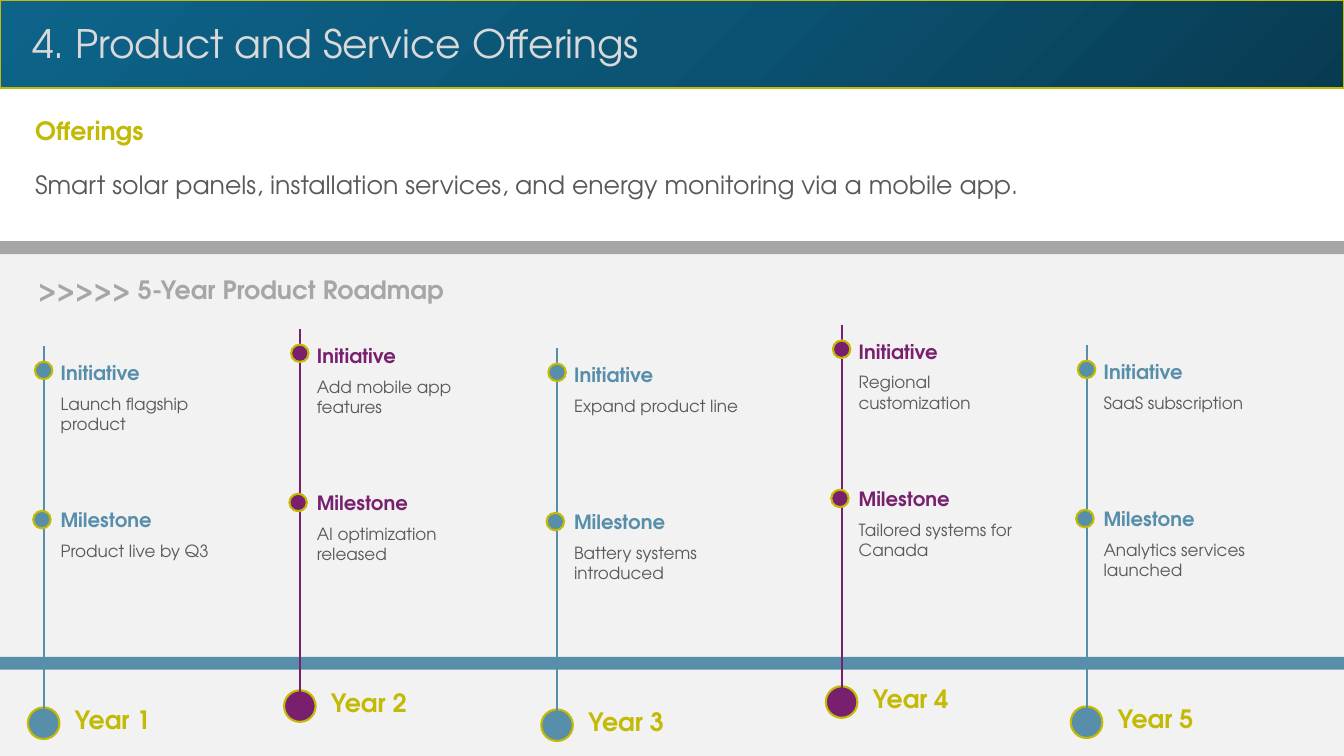
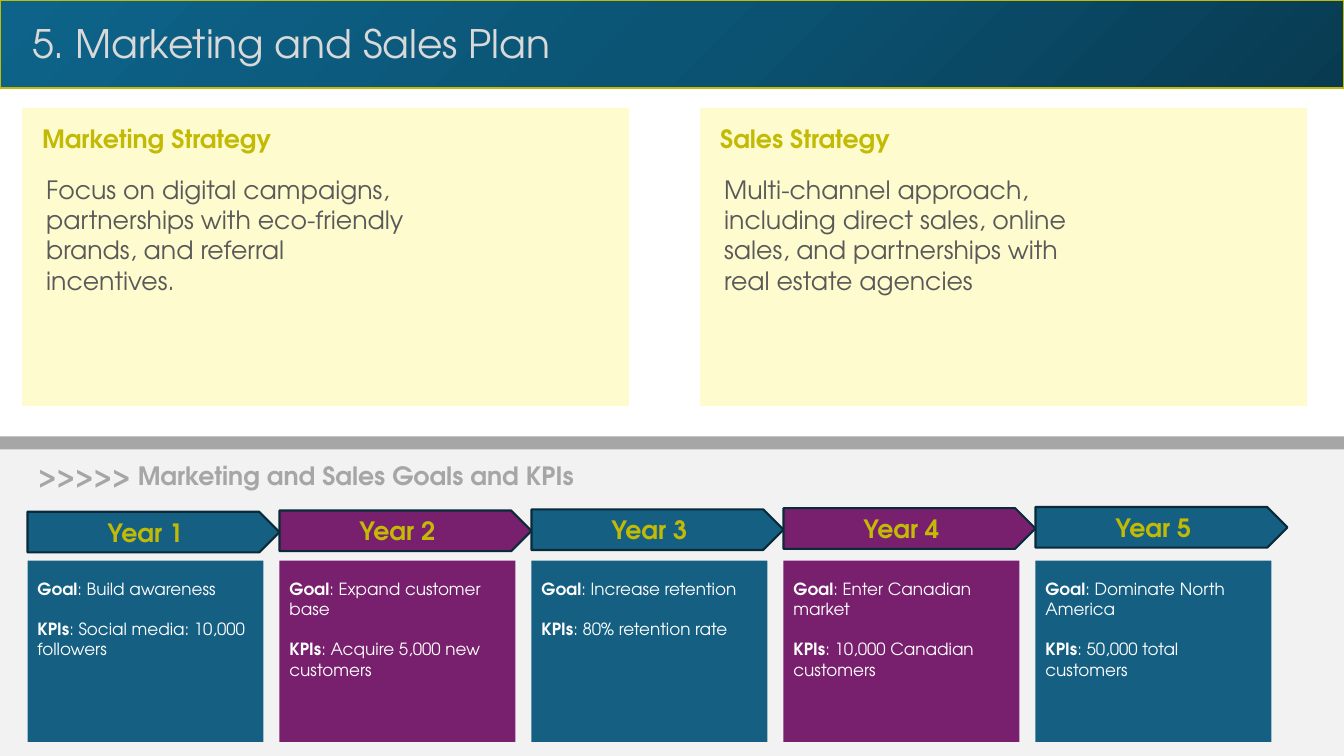
from copy import deepcopy
from typing import Any, NamedTuple

from lxml import etree
from pptx import Presentation, util as u
from pptx.dml import color as dml
from pptx.enum import shapes, text
from pptx.oxml.ns import qn

# The slide is a grid of 80 columns by 45 rows of square cells.
COLUMNS, ROWS = 80, 45
CELL = u.Inches(7.5) / ROWS

FONT = "TeX Gyre Adventor"
WHITE, PALE_GREY, TITLE_GREY = "FFFFFF", "F2F2F2", "D9D9D9"
MID_GREY, TEXT_GREY = "A6A6A6", "595959"
OLIVE, CREAM = "C3BA05", "FEFCCE"
STEEL, BLUE, PLUM, NAVY = "578EA9", "156082", "78206E", "092A39"
BAND_GRADIENT = ((0, "083B52"), (0.5, "0B5474"), (1, "0D638A"))

RECT = shapes.MSO_SHAPE.RECTANGLE
CIRCLE = shapes.MSO_SHAPE.OVAL
ARROW = shapes.MSO_SHAPE.PENTAGON
BAR_ROWS = 0.77


class Box(NamedTuple):
    col: float
    row: float
    cols: float
    rows: float


class Run(NamedTuple):
    words: str
    bold: bool = False


class RoadmapYear(NamedTuple):
    axis: float
    top: float
    text_cols: float
    initiative: str
    milestone: str


class Strategy(NamedTuple):
    heading: str
    body: str


class YearTarget(NamedTuple):
    goal: str
    kpis: str


ROADMAP = (
    RoadmapYear(2.6, 20.58, 12.6, "Launch flagship product", "Product live by Q3"),
    RoadmapYear(17.85, 19.56, 12.1, "Add mobile app features", "AI optimization released"),
    RoadmapYear(33.16, 20.7, 12.6, "Expand product line", "Battery systems introduced"),
    RoadmapYear(50.1, 19.32, 10.86, "Regional customization", "Tailored systems for Canada"),
    RoadmapYear(64.68, 20.52, 14.2, "SaaS subscription", "Analytics services launched"),
)
STRATEGIES = (
    Strategy("Marketing Strategy",
             "Focus on digital campaigns, partnerships with eco-friendly brands, "
             "and referral incentives."),
    Strategy("Sales Strategy",
             "Multi-channel approach, including direct sales, online sales, "
             "and partnerships with real estate agencies"),
)
TARGETS = (
    YearTarget("Build awareness", "Social media: 10,000 followers"),
    YearTarget("Expand customer base", "Acquire 5,000 new customers"),
    YearTarget("Increase retention", "80% retention rate"),
    YearTarget("Enter Canadian market", "10,000 Canadian customers"),
    YearTarget("Dominate North America", "50,000 total customers"),
)


def rgb(value: str) -> dml.RGBColor:
    return dml.RGBColor.from_string(value)


def cells(*counts: float) -> list[u.Emu]:
    return [u.Emu(round(count * CELL)) for count in counts]


def alternate(index: int, even: str) -> str:
    return PLUM if index % 2 else even


def add_block(parent: Any, box: Box, fill: str, *, kind: Any = RECT,
              outline: str | None = None) -> Any:
    """Draw a preset shape on a slide or in a group."""
    block = parent.shapes.add_shape(kind, *cells(*box))
    block.shadow.inherit = False
    block.fill.solid()
    block.fill.fore_color.rgb = rgb(fill)
    if outline:
        block.line.color.rgb = rgb(outline)
        block.line.width = u.Pt(1.5)
    else:
        block.line.fill.background()
    return block


def add_dot(parent: Any, x: float, y: float, size: float, fill: str) -> None:
    """Draw an outlined circle around the given centre."""
    add_block(parent, Box(x - size / 2, y - size / 2, size, size), fill,
              kind=CIRCLE, outline=OLIVE)


def add_stem(parent: Any, x: float, start: float, end: float, color: str) -> None:
    stem = parent.shapes.add_connector(
        shapes.MSO_CONNECTOR.STRAIGHT, *cells(x, start, x, end))
    stem.line.color.rgb = rgb(color)
    stem.line.width = u.Pt(1.5)
    etree.SubElement(stem.element.spPr, qn("a:effectLst"))


def write(frame: Any, *paragraphs: list[Run], size: float, color: str,
          gap: float = 0, align: Any = text.PP_ALIGN.LEFT) -> None:
    """Fill a text frame; gap is the space in points between paragraphs."""
    frame.word_wrap = True
    for index, runs in enumerate(paragraphs):
        paragraph = frame.add_paragraph() if index else frame.paragraphs[0]
        paragraph.alignment = align
        if index:
            paragraph.space_before = u.Pt(gap)
        for words, bold in runs:
            run = paragraph.add_run()
            run.text = words
            run.font.name = FONT
            run.font.size = u.Pt(size)
            run.font.bold = bold
            run.font.color.rgb = rgb(color)


def add_label(slide: Any, box: Box, words: str, *, size: float = 18,
              color: str = OLIVE, bold: bool = True) -> None:
    frame = slide.shapes.add_textbox(*cells(*box)).text_frame
    write(frame, [Run(words, bold)], size=size, color=color)
    frame.auto_size = text.MSO_AUTO_SIZE.SHAPE_TO_FIT_TEXT


def add_title_band(slide: Any, title: str) -> None:
    band = add_block(slide, Box(0, 0, COLUMNS, 5.25), BLUE, outline=OLIVE)
    band.fill.gradient()
    band.fill.gradient_angle = 135
    stop_list = band.element.spPr.find(qn("a:gradFill")).find(qn("a:gsLst"))
    stop_list.append(deepcopy(stop_list[0]))
    for stop, (position, color) in zip(band.fill.gradient_stops, BAND_GRADIENT):
        stop.position = position
        stop.color.rgb = rgb(color)
    add_label(slide, Box(1.32, 0.84, 48.5, 3.43), title,
              size=28, color=TITLE_GREY, bold=False)


def add_slide(deck: Any, title: str, section: str, bar_row: float,
              section_row: float) -> Any:
    """Add a slide with a title band above a grey lower section."""
    slide = deck.slides.add_slide(deck.slide_layouts[6])
    panel_row = bar_row + 0.33
    add_block(slide, Box(0, panel_row, COLUMNS, ROWS - panel_row), PALE_GREY)
    add_label(slide, Box(1.68, section_row, 41.7, 2.4), f">>>>> {section}",
              color=MID_GREY)
    add_title_band(slide, title)
    add_block(slide, Box(0, bar_row, COLUMNS, BAR_ROWS), MID_GREY)
    return slide


def add_roadmap_year(slide: Any, index: int, year: RoadmapYear) -> None:
    color = alternate(index, STEEL)
    axis, top = year.axis, year.top
    foot = top + 22.47
    add_label(slide, Box(axis + 1.26, top + 21.06, 7.2, 2.4), f"Year {index + 1}")
    for heading, detail, offset in (("Initiative", year.initiative, 0.6),
                                    ("Milestone", year.milestone, 9.36)):
        left, row = axis + 0.42, top + offset
        add_label(slide, Box(left, row, 7.2, 2.04), heading, size=14, color=color)
        add_label(slide, Box(left, row + 1.94, year.text_cols, 3), detail,
                  size=12, color=TEXT_GREY, bold=False)
    marker = slide.shapes.add_group_shape()
    add_dot(marker, axis, foot, 1.88, color)
    add_stem(marker, axis, foot, top, color)
    add_dot(marker, axis, top + 1.47, 1.04, color)
    add_dot(marker, axis - 0.1, top + 10.35, 1.04, color)


def add_strategy(slide: Any, left: float, strategy: Strategy) -> None:
    top = 6.42
    add_block(slide, Box(left, top, 36.12, 17.74), CREAM)
    add_label(slide, Box(left + 0.6, top + 0.6, 24.06, 2.4), strategy.heading)
    add_label(slide, Box(left + 0.84, top + 3.66, 22.62, 7.86), strategy.body,
              color=TEXT_GREY, bold=False)


def add_year_target(slide: Any, index: int, target: YearTarget) -> None:
    color = alternate(index, BLUE)
    left = 1.64 + 15 * index
    arrow = add_block(slide, Box(left, 30.46 - 0.07 * index, 15, 2.42), color,
                      kind=ARROW, outline=NAVY)
    arrow.text_frame.margin_right = u.Inches(0.16)
    write(arrow.text_frame, [Run(f"Year {index + 1}", True)], size=18,
          color=OLIVE, align=text.PP_ALIGN.CENTER)
    card = add_block(slide, Box(left, 33.37, 14.04, 10.8), color).text_frame
    card.vertical_anchor = text.MSO_ANCHOR.TOP
    card.margin_top = u.Inches(0.18)
    write(card, [Run("Goal", True), Run(f": {target.goal}")],
          [Run("KPIs", True), Run(f": {target.kpis}")],
          size=12, color=WHITE, gap=14.4)


def build_offerings(deck: Any) -> None:
    slide = add_slide(deck, "4. Product and Service Offerings",
                      "5-Year Product Roadmap", 14.36, 16.02)
    add_label(slide, Box(1.5, 6.54, 24.06, 2.4), "Offerings")
    add_label(slide, Box(1.5, 9.78, 77.4, 2.4),
              "Smart solar panels, installation services, and energy monitoring "
              "via a mobile app.", color=TEXT_GREY, bold=False)
    add_block(slide, Box(0, 39.1, COLUMNS, BAR_ROWS), STEEL)
    for index, year in enumerate(ROADMAP):
        add_roadmap_year(slide, index, year)


def build_marketing(deck: Any) -> None:
    slide = add_slide(deck, "5. Marketing and Sales Plan",
                      "Marketing and Sales Goals and KPIs", 25.98, 27.12)
    for index, strategy in enumerate(STRATEGIES):
        add_strategy(slide, 1.32 + 40.36 * index, strategy)
    for index, target in enumerate(TARGETS):
        add_year_target(slide, index, target)


def main() -> None:
    deck = Presentation()
    deck.slide_width, deck.slide_height = cells(COLUMNS, ROWS)
    build_offerings(deck)
    build_marketing(deck)
    deck.save("out.pptx")


if __name__ == "__main__":
    main()
